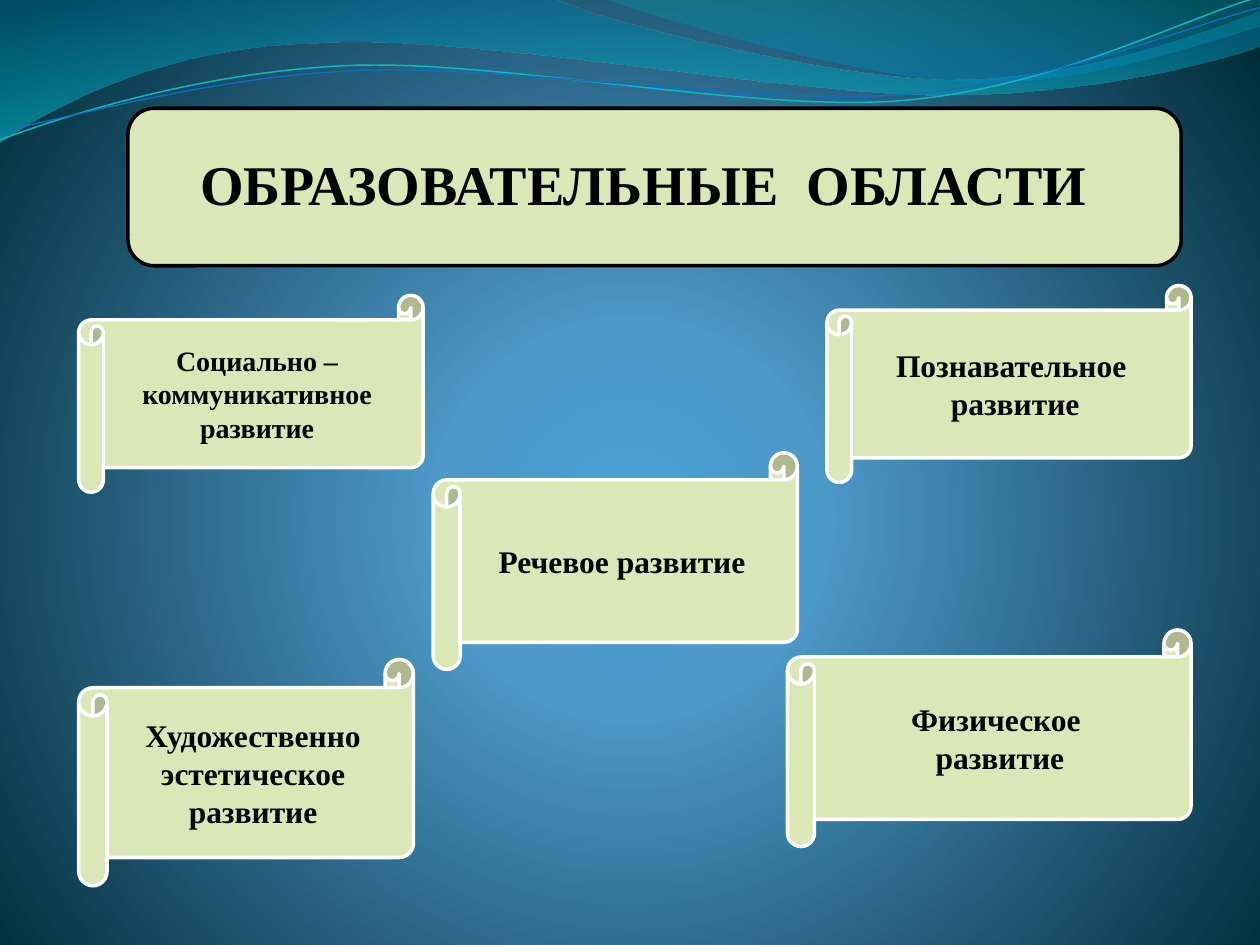
import math

from pptx import Presentation
from pptx import util as u
from pptx.dml.color import RGBColor
from pptx.enum import shapes, text
from pptx.oxml import parse_xml
from pptx.oxml.ns import nsdecls, qn

BLACK = RGBColor(0x00, 0x00, 0x00)
WHITE = RGBColor(0xFF, 0xFF, 0xFF)
PALE_GREEN = RGBColor(0xDB, 0xE7, 0xB6)
SKY = RGBColor(0x4A, 0xA0, 0xD6)
STEEL = RGBColor(0x4C, 0x98, 0xC7)
DEEP_SEA = RGBColor(0x00, 0x2C, 0x38)
OCEAN = RGBColor(0x00, 0x74, 0xA1)
AQUA = RGBColor(0x00, 0xC6, 0xCF)
TEAL = RGBColor(0x00, 0xA1, 0xA9)
AZURE = RGBColor(0x00, 0x8B, 0xBF)
TURQUOISE = RGBColor(0x0A, 0xB8, 0xBF)
BLUE = RGBColor(0x0F, 0x6F, 0xC6)
FONT = "Times New Roman"
TILT = 2.7

DOWNWARD = '<a:lin ang="5400000" scaled="1"/>'
RADIAL = '<a:path path="circle"><a:fillToRect l="10000" t="110000" r="10000" b="100000"/></a:path>'


def set_gradient(fill, owner, stops, direction):
    """Fill owner with (position %, colour, opacity %) stops."""
    fill.gradient()
    old = next(owner.iter(qn("a:gradFill")))
    stop_xml = "".join(
        f'<a:gs pos="{position * 1000}"><a:srgbClr val="{color}">'
        f'<a:alpha val="{opacity * 1000}"/></a:srgbClr></a:gs>'
        for position, color, opacity in stops)
    old.getparent().replace(old, parse_xml(
        f'<a:gradFill {nsdecls("a")} rotWithShape="1">'
        f'<a:gsLst>{stop_xml}</a:gsLst>{direction}</a:gradFill>'))


def add_wave(start, segments, close):
    """Draw segments of one point (line) or three points (Bezier curve), in inches."""
    emu = [(u.Inches(x), u.Inches(y)) for x, y in sum(segments, [])]
    builder = slide.shapes.build_freeform(u.Inches(start[0]), u.Inches(start[1]))
    builder.add_line_segments(emu, close=close)
    wave = builder.convert_to_shape()
    wave.shadow.inherit = False
    legs = list(wave.element.iter(qn("a:lnTo")))
    for segment in segments:
        own, legs = legs[:len(segment)], legs[len(segment):]
        if len(segment) == 3:
            curve = parse_xml(f'<a:cubicBezTo {nsdecls("a")}/>')
            own[0].addprevious(curve)
            for leg in own:
                curve.append(leg[0])
                leg.getparent().remove(leg)
    return wave


deck = Presentation()
deck.slide_width, deck.slide_height = u.Inches(10), u.Inches(7.5)
column, row = deck.slide_width / 100, deck.slide_height / 75
slide = deck.slides.add_slide(deck.slide_layouts[5])

set_gradient(slide.background.fill, slide.element,
             [(0, SKY, 100), (25, STEEL, 100), (100, DEEP_SEA, 100)], RADIAL)

# Waves along the top edge, kept on the master
bands = [
    ((0, 0), [
        [(4.4, -0.01)],
        [(4.76, 0.17), (6.64, 0.63), (7.58, 0.63)],
        [(8.53, 0.63), (9.58, 0.26), (10, 0.09)],
        [(10.01, 0.36)],
        [(9.83, 0.44), (8.7, 0.76), (7.46, 0.75)],
        [(6.22, 0.75), (3.82, 0.28), (2.57, 0.34)],
        [(1.29, 0.36), (0.46, 0.83), (-0.01, 1.13)],
        [(0, 0)],
    ], [(0, OCEAN, 45), (100, AQUA, 55)]),
    ((4.79, -0.01), [
        [(5.09, 0.11), (6.82, 0.62), (7.69, 0.65)],
        [(8.56, 0.69), (9.61, 0.32), (10, 0.21)],
        [(10, 0)],
        [(4.79, -0.01)],
    ], [(0, TEAL, 30), (80, AZURE, 45)]),
]
decor = []
for start, segments, stops in bands:
    band = add_wave(start, segments, True)
    set_gradient(band.fill, band.element, stops, DOWNWARD)
    band.line.fill.background()
    decor.append(band)

# Strands are laid out level about their centre, then tilted
strands = [
    ((4.99, 0.58), [
        (0, 1.11), (0.48, 0.93), (1.58, 0.57), (2.77, 0.52),
        (3.95, 0.47), (5.93, 0.89), (7.13, 0.8),
        (8.33, 0.71), (9.38, 0.15), (9.98, -0.02),
    ], TURQUOISE, 0.85),
    ((5, 0.59), [
        (0, 1.04), (0.47, 0.96), (1.64, 0.61), (2.83, 0.56),
        (4.03, 0.51), (5.97, 0.84), (7.17, 0.75),
        (8.36, 0.67), (9.41, 0.21), (10, 0.06),
    ], BLUE, 0.75),
]
cosine, sine = math.cos(math.radians(TILT)), math.sin(math.radians(TILT))
pair = []
for (cx, cy), points, color, width in strands:
    level = [(cx + (x - cx) * cosine - (y - cy) * sine,
              cy + (x - cx) * sine + (y - cy) * cosine) for x, y in points]
    strand = add_wave(level[0], [level[i:i + 3] for i in (1, 4, 7)], False)
    strand.rotation = 360 - TILT
    strand.fill.background()
    strand.line.color.rgb = color
    strand.line.width = u.Pt(width)
    pair.append(strand)
decor.append(slide.shapes.add_group_shape(pair))

master_tree = deck.slide_master.shapes.element
for position, part in enumerate(decor, start=2):
    master_tree.insert(position, part.element)
for number, properties in enumerate(master_tree.iter(qn("p:cNvPr")), start=1):
    properties.set("id", str(number))

# Panels: left, top, width, height in columns and rows
ROUNDED = shapes.MSO_SHAPE.ROUNDED_RECTANGLE
SCROLL = shapes.MSO_SHAPE.HORIZONTAL_SCROLL
panels = [
    (ROUNDED, 10.16, 8.59, 83.59, 12.5, BLACK, 32, ""),
    (SCROLL, 6.25, 23.44, 27.34, 15.63, WHITE, 16, "Социально –\nкоммуникативное\nразвитие"),
    (SCROLL, 34.38, 35.94, 28.91, 17.19, WHITE, 18, "Речевое развитие"),
    (SCROLL, 6.25, 52.34, 26.56, 17.97, WHITE, 18, "Художественно\n эстетическое \nразвитие"),
    (SCROLL, 62.5, 50, 32.03, 17.19, WHITE, 18, "Физическое\n развитие"),
    (SCROLL, 65.63, 22.66, 28.91, 15.63, WHITE, 18, "Познавательное \nразвитие"),
]
lettering = []
for kind, left, top, width, height, outline, size, wording in panels:
    panel = slide.shapes.add_shape(
        kind, int(left * column), int(top * row), int(width * column), int(height * row))
    panel.shadow.inherit = False
    panel.fill.solid()
    panel.fill.fore_color.rgb = PALE_GREEN
    panel.line.color.rgb = outline
    panel.line.width = u.Pt(2)
    if wording:
        panel.text_frame.text = wording
        panel.text_frame.vertical_anchor = text.MSO_ANCHOR.MIDDLE
        lettering.append((panel.text_frame, size))
    else:
        # The heading stands in front of its panel
        heading = slide.shapes.title
        panel.element.addnext(heading.element)

heading.left, heading.top = int(12.5 * column), int(10.2 * row)
heading.width, heading.height = int(78.3 * column), int(7 * row)
frame = heading.text_frame
frame.text = "ОБРАЗОВАТЕЛЬНЫЕ  ОБЛАСТИ "
frame.auto_size = text.MSO_AUTO_SIZE.NONE
frame.vertical_anchor = text.MSO_ANCHOR.BOTTOM
frame.margin_left = frame.margin_top = frame.margin_right = frame.margin_bottom = 0
lettering.append((frame, 32))

for frame, size in lettering:
    frame.word_wrap = True
    for paragraph in frame.paragraphs:
        paragraph.alignment = text.PP_ALIGN.CENTER
        for run in paragraph.runs:
            run.font.name = FONT
            run.font.size = u.Pt(size)
            run.font.bold = True
            run.font.color.rgb = BLACK

deck.save("out.pptx")
